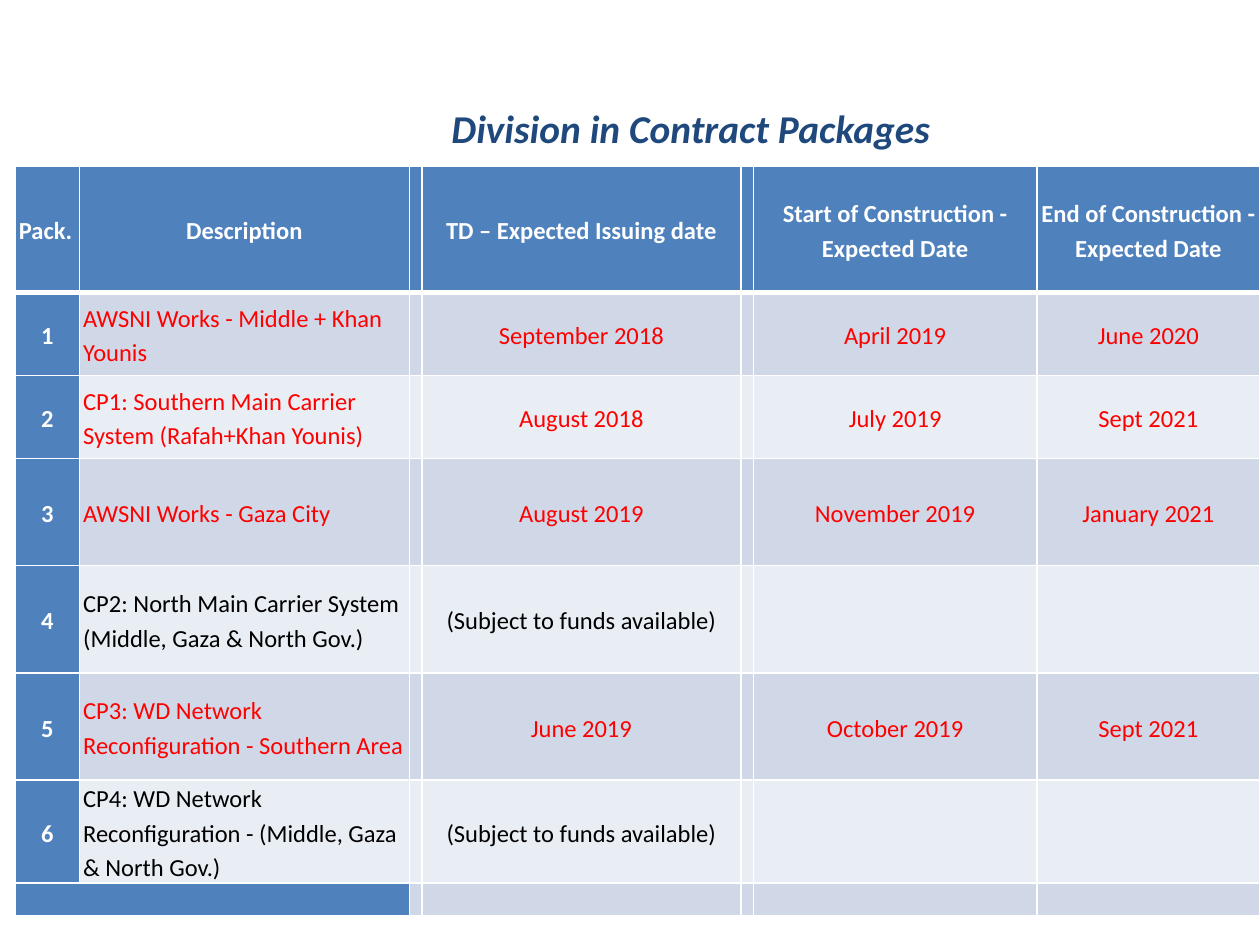
from dataclasses import dataclass

import pptx
import pptx.util
import pptx.dml.color
import pptx.enum.text
import pptx.oxml
import pptx.oxml.ns
from lxml import etree

TITLE = "Division in Contract Packages"
HEADINGS = ("Pack.", "Description", "TD – Expected Issuing date",
            "Start of Construction - Expected Date", "End of Construction - Expected Date")
UNFUNDED = "(Subject to funds available)"
PACKAGES = [
    ("AWSNI Works - Middle + Khan Younis", "September 2018", "April 2019", "June 2020"),
    ("CP1: Southern Main Carrier System (Rafah+Khan Younis)", "August 2018", "July 2019", "Sept 2021"),
    ("AWSNI Works - Gaza City", "August 2019", "November 2019", "January 2021"),
    ("CP2: North Main Carrier System (Middle, Gaza & North Gov.)", UNFUNDED, "", ""),
    ("CP3: WD Network Reconfiguration - Southern Area", "June 2019", "October 2019", "Sept 2021"),
    ("CP4: WD Network Reconfiguration - (Middle, Gaza & North Gov.)", UNFUNDED, "", ""),
]
COLUMN_WIDTHS = (0.51, 2.62, 0.1, 2.53, 0.1, 2.25, 1.77)
ROW_HEIGHTS = (1, 0.66, 0.66, 0.85, 0.85, 0.85, 0.81, 0.26)
TEXT_COLUMNS = (0, 1, 3, 5, 6)  # the others are narrow spacers

Inches, Pt = pptx.util.Inches, pptx.util.Pt
Align, Anchor = pptx.enum.text.PP_ALIGN, pptx.enum.text.MSO_ANCHOR
qn = pptx.oxml.ns.qn


@dataclass(frozen=True)
class Theme:
    font: str = "Calibri"
    title_size: float = 22.5
    table_size: float = 14
    title: str = "1F497D"
    header: str = "4F81BD"
    bands: tuple = ("E9EDF4", "D0D8E8")
    white: str = "FFFFFF"
    scheduled: str = "FF0000"
    pending: str = "000000"


THEME = Theme()


def rgb(value):
    return pptx.dml.color.RGBColor.from_string(value)


def style_font(font, size, color, bold, italic=False):
    font.name, font.size, font.bold, font.italic = THEME.font, Pt(size), bold, italic
    font.color.rgb = rgb(color)


def set_borders(cell, bottom_width):
    """Draw white borders; they must come before the fill in the cell properties."""
    properties = cell._tc.get_or_add_tcPr()
    widths = {"lnL": 1, "lnR": 1, "lnT": 1, "lnB": bottom_width}
    for position, (tag, width) in enumerate(widths.items()):
        line = etree.Element(qn("a:" + tag), w=str(Pt(width)))
        fill = etree.SubElement(line, qn("a:solidFill"))
        etree.SubElement(fill, qn("a:srgbClr"), val=THEME.white)
        properties.insert(position, line)


def write_cell(cell, text, color, bold, alignment):
    para = cell.text_frame.paragraphs[0]
    if not text:
        etree.SubElement(para._p, qn("a:endParaRPr"), sz=str(int(THEME.table_size * 100)))
        return
    para.text = text
    para.alignment, para.line_spacing, para.space_before = alignment, 1.15, Pt(6)
    style_font(para.runs[0].font, THEME.table_size, color, bold)


def add_title(slide):
    box = slide.shapes.title
    box.left, box.top, box.width, box.height = map(Inches, (1.93, 0.79, 7.11, 0.44))
    frame = box.text_frame
    frame.text = TITLE
    frame.auto_size = pptx.enum.text.MSO_AUTO_SIZE.NONE
    frame.vertical_anchor = Anchor.MIDDLE
    frame.margin_left = frame.margin_right = Inches(0.06)
    frame.margin_top = frame.margin_bottom = Inches(0.03)
    para = frame.paragraphs[0]
    para.alignment = Align.CENTER
    span = para.runs[0]
    style_font(span.font, THEME.title_size, THEME.title, True, True)
    shadow = pptx.oxml.parse_xml(
        f'<a:effectLst {pptx.oxml.ns.nsdecls("a")}>'
        '<a:outerShdw blurRad="38100" dist="38100" dir="2700000" algn="tl">'
        '<a:srgbClr val="000000"><a:alpha val="43000"/></a:srgbClr>'
        '</a:outerShdw></a:effectLst>')
    span._r.rPr.find(qn("a:solidFill")).addnext(shadow)


def add_schedule(slide):
    records = [HEADINGS]
    records += [(str(number), *package) for number, package in enumerate(PACKAGES, 1)]
    records.append(("",) * len(HEADINGS))
    table = slide.shapes.add_table(
        len(ROW_HEIGHTS), len(COLUMN_WIDTHS), Inches(0.12), Inches(1.32),
        Inches(sum(COLUMN_WIDTHS)), Inches(sum(ROW_HEIGHTS))).table
    for column, width in zip(table.columns, COLUMN_WIDTHS):
        column.width = Inches(width)
    for row, height in zip(table.rows, ROW_HEIGHTS):
        row.height = Inches(height)

    for r, record in enumerate(records):
        texts = dict(zip(TEXT_COLUMNS, record))
        body_color = THEME.scheduled if record[-1] else THEME.pending
        for c in range(len(COLUMN_WIDTHS)):
            cell = table.cell(r, c)
            heading = r == 0 or c == 0
            cell.margin_left = cell.margin_right = Inches(0.03)
            cell.margin_top = cell.margin_bottom = 0
            cell.vertical_anchor = Anchor.MIDDLE
            cell.fill.solid()
            cell.fill.fore_color.rgb = rgb(THEME.header if heading else THEME.bands[r % 2])
            set_borders(cell, 3 if r == 0 else 1)
            left = (c == 1 and r > 0) or (r == c == 0)
            write_cell(cell, texts.get(c, ""), THEME.white if heading else body_color,
                       heading, Align.LEFT if left else Align.CENTER)
    last = len(records) - 1
    table.cell(last, 0).merge(table.cell(last, 1))


def main():
    deck = pptx.Presentation()
    deck.slide_width, deck.slide_height = Inches(10), Inches(7.5)
    page = deck.slides.add_slide(deck.slide_layouts.get_by_name("Title Only"))
    add_title(page)
    add_schedule(page)
    deck.save("out.pptx")


if __name__ == "__main__":
    main()
